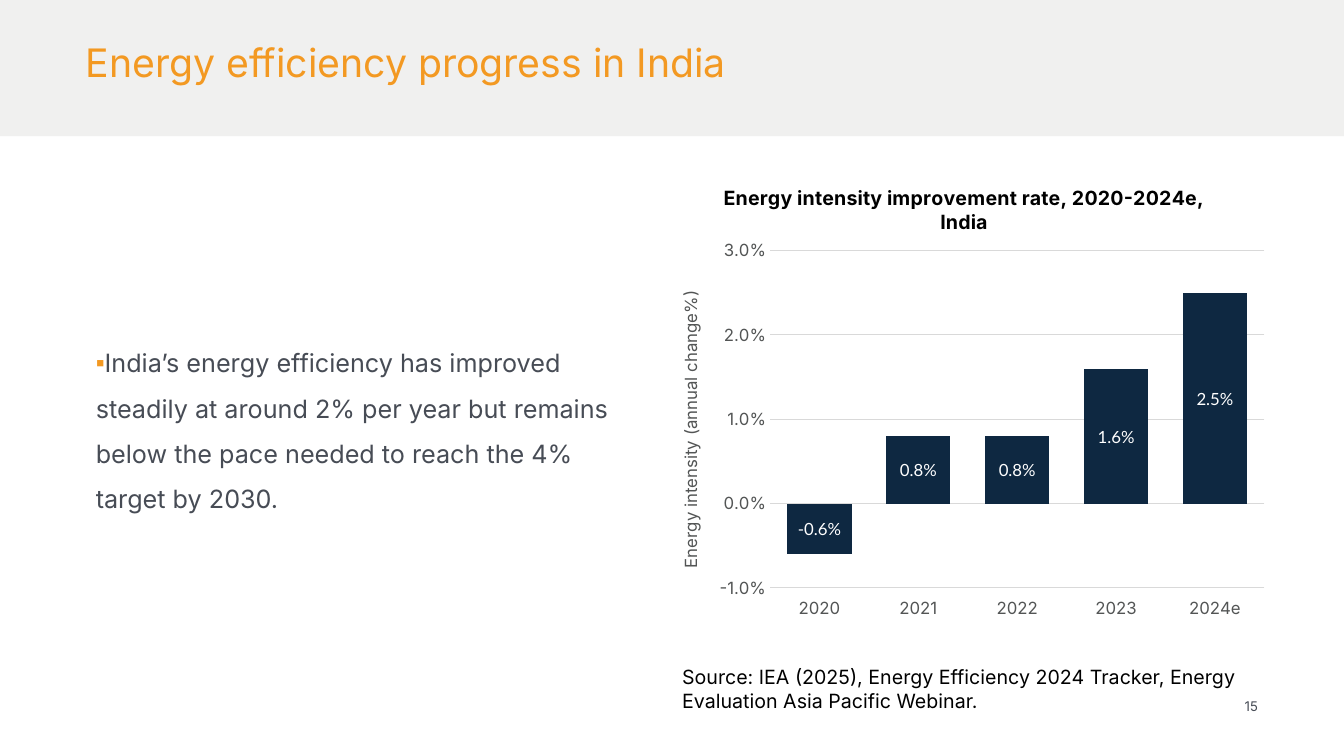
from dataclasses import dataclass

import lxml.etree
import pptx
import pptx.chart.data
import pptx.dml.color
import pptx.enum.chart
import pptx.enum.shapes
import pptx.enum.text
import pptx.oxml
import pptx.oxml.ns
import pptx.util

Cm = pptx.util.Cm
Pt = pptx.util.Pt
qn = pptx.oxml.ns.qn
ALIGN = pptx.enum.text.PP_ALIGN
ANCHOR = pptx.enum.text.MSO_ANCHOR
CHART = pptx.enum.chart

HUES = {
    "band": "CECFCD",
    "accent": "F39922",
    "text": "474C55",
    "axis": "535555",
    "grid": "D9D9D9",
    "bar": "0E2841",
    "black": "000000",
    "white": "FFFFFF",
}


@dataclass
class Label:
    text: str
    box: tuple[float, float, float, float]
    size: float
    hue: str
    inset: bool = True
    align: ALIGN = ALIGN.LEFT
    anchor: ANCHOR = ANCHOR.TOP
    lines: float = 1.0


TITLE = Label("Energy efficiency progress in India", (2.16, 1.09, 25.12, 1.07),
              28, "accent", inset=False, lines=0.9)
BODY = Label("India’s energy efficiency has improved steadily at around 2% per year "
             "but remains below the pace needed to reach the 4% target by 2030.",
             (2.16, 8.86, 13.59, 3.61), 18, "text", anchor=ANCHOR.MIDDLE, lines=1.5)
SOURCE = Label("Source: IEA (2025), Energy Efficiency 2024 Tracker, Energy Evaluation "
               "Asia Pacific Webinar.", (16.94, 16.64, 16.28, 1.45), 14, "black")
NUMBER = Label("15", (28.8, 17.6, 2.9, 0.41), 9.5, "text", inset=False,
               align=ALIGN.RIGHT, anchor=ANCHOR.MIDDLE)


def tint(name: str) -> pptx.dml.color.RGBColor:
    return pptx.dml.color.RGBColor.from_string(HUES[name])


def style(font, size: float, hue: str, face: str = "Inter", bold: bool = False) -> None:
    font.name = face
    font.size = Pt(size)
    font.bold = bold
    font.color.rgb = tint(hue)


def write(shape, label: Label, bullet: str = "") -> None:
    shape.left, shape.top, shape.width, shape.height = map(Cm, label.box)
    frame = shape.text_frame
    frame.text = label.text
    frame.word_wrap = True
    frame.auto_size = pptx.enum.text.MSO_AUTO_SIZE.SHAPE_TO_FIT_TEXT
    frame.vertical_anchor = label.anchor
    if not label.inset:
        frame.margin_left = frame.margin_right = 0
        frame.margin_top = frame.margin_bottom = 0
    para = frame.paragraphs[0]
    para.alignment = label.align
    para.line_spacing = label.lines
    para.space_before = Pt(0)
    if bullet:
        para.space_after = Pt(6)
        mark(para, bullet)
    style(para.font, label.size, label.hue)


def mark(para, sign: str) -> None:
    props = para._p.get_or_add_pPr()
    props.set("marL", "0")
    props.set("indent", str(-Cm(0.79)))
    color = lxml.etree.SubElement(props, qn("a:buClr"))
    lxml.etree.SubElement(color, qn("a:srgbClr"), val=HUES["accent"])
    lxml.etree.SubElement(props, qn("a:buChar"), char=sign)
    tabs = lxml.etree.SubElement(props, qn("a:tabLst"))
    lxml.etree.SubElement(tabs, qn("a:tab"), pos=str(Cm(0.97)), algn="l")


def band(slide, width: int) -> None:
    shape = slide.shapes.add_shape(
        pptx.enum.shapes.MSO_SHAPE.RECTANGLE, 0, 0, width, Cm(3.43))
    shape.shadow.inherit = False
    shape.fill.solid()
    shape.fill.fore_color.rgb = tint("band")
    shape.line.fill.background()
    color = shape._element.spPr.find(qn("a:solidFill"))[0]
    lxml.etree.SubElement(color, qn("a:alpha"), val="30000")
    slide.shapes._spTree.insert(2, shape._element)


def head(owner, text: str, size: float, hue: str, bold: bool = False) -> None:
    frame = owner.text_frame
    frame.text = text
    style(frame.paragraphs[0].font, size, hue, bold=bold)


def place(chart, x: float, y: float, w: float, h: float) -> None:
    area = chart._chartSpace.chart.plotArea
    for old in area.findall(qn("c:layout")):
        area.remove(old)
    layout = lxml.etree.Element(qn("c:layout"))
    manual = lxml.etree.SubElement(layout, qn("c:manualLayout"))
    parts = {"layoutTarget": "inner", "xMode": "edge", "yMode": "edge",
             "x": x, "y": y, "w": w, "h": h}
    for name, value in parts.items():
        lxml.etree.SubElement(manual, qn(f"c:{name}"), val=str(value))
    area.insert(0, layout)


def graph(slide) -> None:
    data = pptx.chart.data.CategoryChartData(number_format="0.0%")
    data.categories = ["2020", "2021", "2022", "2023", "2024e"]
    data.add_series("Series 1", [-0.006, 0.008, 0.008, 0.016, 0.025])
    chart = slide.shapes.add_chart(
        CHART.XL_CHART_TYPE.COLUMN_CLUSTERED,
        Cm(16.41), Cm(4.19), Cm(15.77), Cm(11.81), data).chart
    style(chart.font, 10, "black", "Lato")
    chart.has_legend = False
    head(chart.chart_title, "Energy intensity improvement rate, 2020-2024e, India",
         14, "black", True)
    place(chart, 0.19, 0.18, 0.79, 0.72)

    years, rates = chart.category_axis, chart.value_axis
    for axis in (years, rates):
        axis.major_tick_mark = axis.minor_tick_mark = CHART.XL_TICK_MARK.NONE
        style(axis.tick_labels.font, 12, "axis")
    years.tick_label_position = CHART.XL_TICK_LABEL_POSITION.LOW
    rates.minimum_scale, rates.maximum_scale, rates.major_unit = -0.01, 0.03, 0.01
    rates.tick_labels.number_format = "0.0%"
    rates.tick_labels.number_format_is_linked = False
    rates.format.line.fill.background()
    head(rates.axis_title, "Energy intensity (annual change%)", 12, "axis")
    for line in (years.format.line, rates.major_gridlines.format.line):
        line.color.rgb = tint("grid")
        line.width = Pt(0.75)

    plot = chart.plots[0]
    plot.gap_width, plot.overlap = 54, -27
    plot.vary_by_categories = False
    bars = plot.series[0]
    bars.invert_if_negative = False
    bars.format.fill.solid()
    bars.format.fill.fore_color.rgb = tint("bar")
    tags = bars.data_labels
    tags.show_value = True
    tags.position = CHART.XL_LABEL_POSITION.CENTER
    tags.number_format = "0.0%"
    tags.number_format_is_linked = False
    style(tags.font, 12, "white", "Lato")


def main() -> None:
    deck = pptx.Presentation()
    deck.slide_width, deck.slide_height = Cm(33.87), Cm(19.05)
    slide = deck.slides.add_slide(deck.slide_layouts[1])
    band(slide, deck.slide_width)
    write(slide.shapes.title, TITLE)
    write(slide.placeholders[1], BODY, "▪")
    graph(slide)
    for label in (SOURCE, NUMBER):
        write(slide.shapes.add_textbox(*map(Cm, label.box)), label)
    deck.save("out.pptx")


if __name__ == "__main__":
    main()
